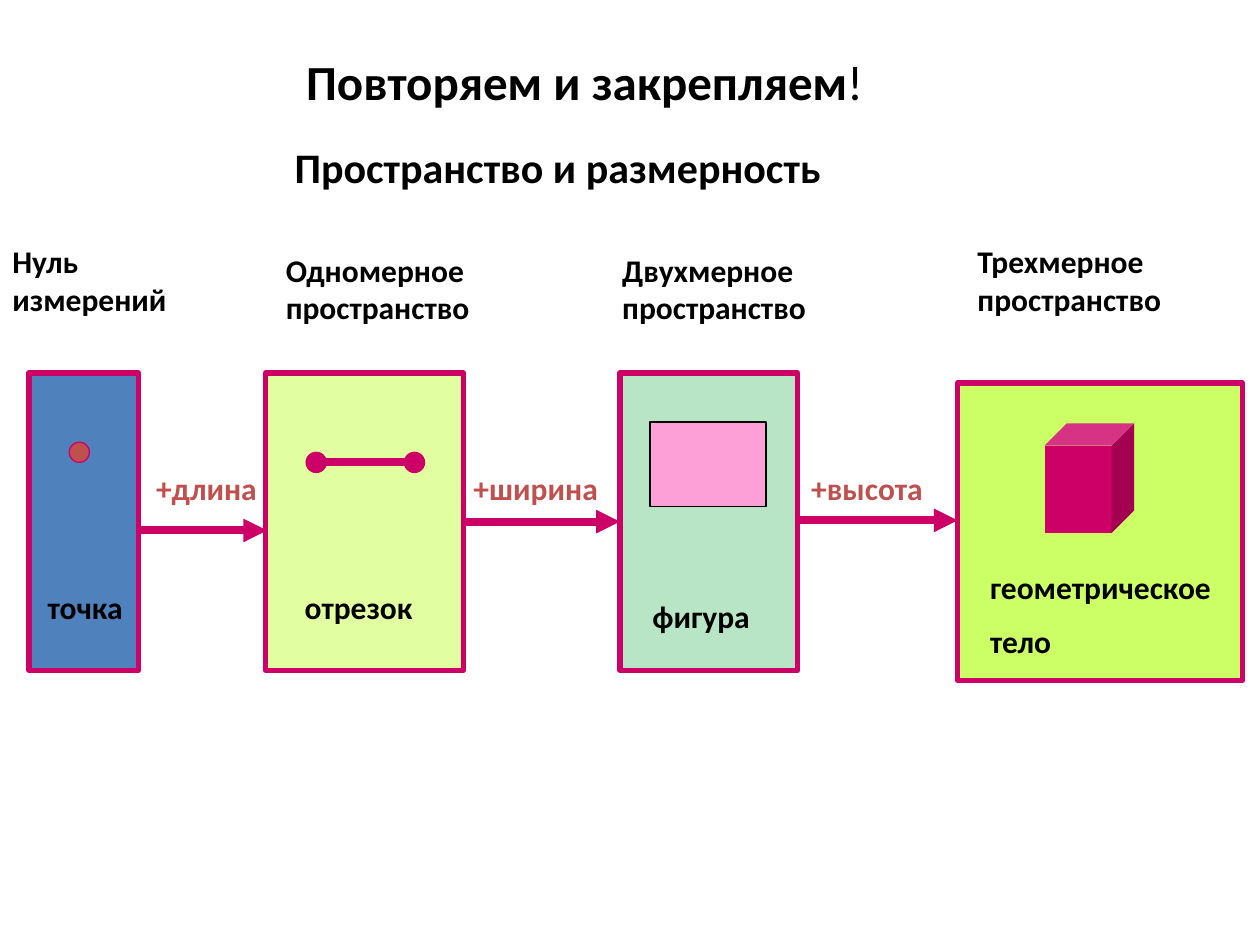
from lxml import etree
from pptx import Presentation
from pptx.dml.color import RGBColor
from pptx.enum.shapes import MSO_CONNECTOR, MSO_SHAPE
from pptx.enum.text import MSO_ANCHOR, MSO_AUTO_SIZE, PP_ALIGN
from pptx.oxml.ns import qn
from pptx.util import Pt

PX = 9144
RECT, OVAL, CUBE = MSO_SHAPE.RECTANGLE, MSO_SHAPE.OVAL, MSO_SHAPE.CUBE
STRAIGHT = MSO_CONNECTOR.STRAIGHT
TOP, LEFT, NO_FIT = MSO_ANCHOR.TOP, PP_ALIGN.LEFT, MSO_AUTO_SIZE.NONE
BLACK, CRIMSON, RED = "000000", "CC0066", "C0504D"


def rgb(value):
    return RGBColor.from_string(value)


def write(sp, paragraphs, size=18, color=BLACK, gap=0):
    tf = sp.text_frame
    for name, value in {"word_wrap": True, "auto_size": NO_FIT, "vertical_anchor": TOP}.items():
        setattr(tf, name, value)
    for i, runs in enumerate(paragraphs):
        p = tf.add_paragraph() if i else tf.paragraphs[0]
        p.alignment = LEFT
        p.space_before = Pt(gap if i else 0)
        for text, bold in runs:
            r = p.add_run()
            r.text = text
            for name, value in {"name": "Calibri", "size": Pt(size), "bold": bold}.items():
                setattr(r.font, name, value)
            r.font.color.rgb = rgb(color)


prs = Presentation()
prs.slide_width, prs.slide_height = 1000 * PX, 750 * PX
slide = prs.slides.add_slide(prs.slide_layouts[5])
shapes = slide.shapes

title = shapes.title
box = {"left": 233, "top": 36, "width": 539, "height": 57}
for name, value in box.items():
    setattr(title, name, value * PX)
write(title, [[("Повторяем и закрепляем", True), ("!", False)]], size=28)

for kind, x, y, w, h, fill, line, weight in [
    (RECT, 23, 296, 87, 236, "4F81BD", CRIMSON, 3),
    (RECT, 211, 296, 157, 236, "E1FEA0", CRIMSON, 3),
    (RECT, 492, 296, 141, 236, "B9E5C7", CRIMSON, 3),
    (RECT, 760, 304, 226, 236, "CCFF66", CRIMSON, 3),
    (OVAL, 55, 351, 16, 16, RED, CRIMSON, 0.75),
    (OVAL, 243, 359, 16, 16, CRIMSON, CRIMSON, 0.75),
    (OVAL, 321, 359, 16, 16, CRIMSON, CRIMSON, 0.75),
    (RECT, 516, 335, 92, 67, "FEA0D8", BLACK, 0.75),
    (CUBE, 829, 336, 71, 87, CRIMSON, None, 0),
]:
    sp = shapes.add_shape(kind, x * PX, y * PX, w * PX, h * PX)
    sp.shadow.inherit = False
    sp.fill.solid()
    sp.fill.fore_color.rgb = rgb(fill)
    if line:
        sp.line.color.rgb = rgb(line)
        sp.line.width = Pt(weight)
    else:
        sp.line.fill.background()

for x1, x2, y, arrow in [
    (251, 329, 367, False),
    (109, 212, 421, True),
    (368, 492, 414, True),
    (633, 760, 413, True),
]:
    cn = shapes.add_connector(STRAIGHT, x1 * PX, y * PX, x2 * PX, y * PX)
    cn.line.color.rgb = rgb(CRIMSON)
    cn.line.width = Pt(4.5)
    if arrow:
        etree.SubElement(cn.line._get_or_add_ln(), qn("a:tailEnd"), type="triangle")
    etree.SubElement(cn._element.spPr, qn("a:effectLst"))

for x, y, w, h, lines, style in [
    (224, 107, 551, 51, ["Пространство и размерность"], {"size": 24}),
    (0, 187, 156, 71, ["Нуль", "измерений"], {}),
    (217, 194, 214, 71, ["Одномерное", "пространство"], {}),
    (484, 194, 214, 71, ["Двухмерное", "пространство"], {}),
    (766, 187, 214, 71, ["Трехмерное", "пространство"], {}),
    (28, 462, 105, 40, ["точка"], {}),
    (232, 462, 110, 40, ["отрезок"], {}),
    (508, 469, 118, 40, ["фигура"], {}),
    (776, 446, 242, 131, ["геометрическое", "тело"], {"gap": 9}),
    (114, 367, 126, 40, ["+длина"], {"color": RED}),
    (366, 367, 143, 40, ["+ширина"], {"color": RED}),
    (634, 367, 143, 40, ["+высота"], {"color": RED}),
]:
    sp = shapes.add_textbox(x * PX, y * PX, w * PX, h * PX)
    write(sp, [[(text, True)] for text in lines], **style)

prs.save("out.pptx")
